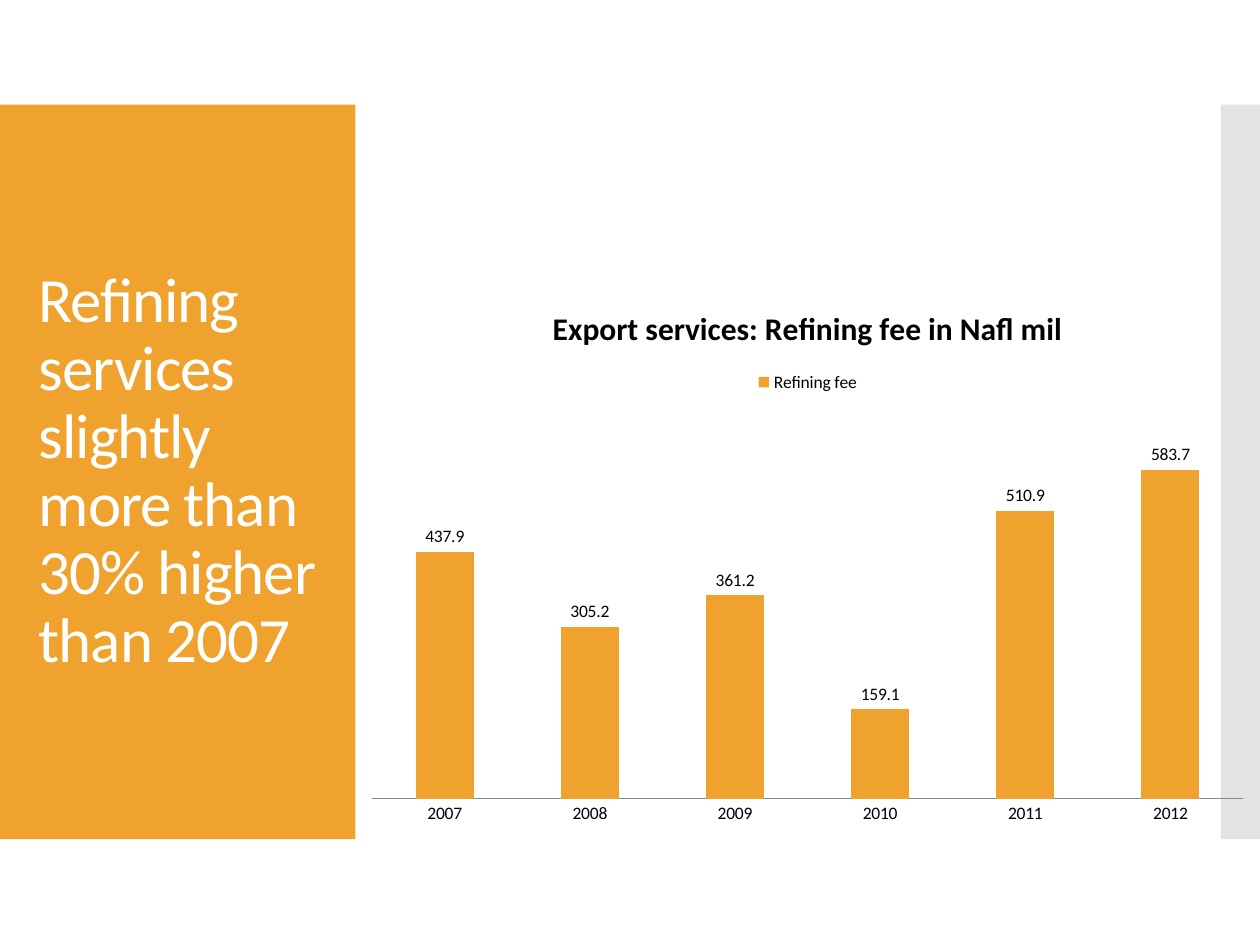
from dataclasses import dataclass

from lxml import etree
from pptx import Presentation
from pptx import util as u
from pptx.chart.data import CategoryChartData
from pptx.dml.color import RGBColor
from pptx.enum import chart as charts, shapes, text
from pptx.oxml import ns

COLORS = {"accent": "F0A22E", "edge": "C8C8C8", "white": "FFFFFF",
          "black": "000000", "axis": "898989"}
FONT = "Calibri"
HEADLINE = "Refining services slightly more than 30% higher than 2007"
CHART_TITLE = "Export services: Refining fee in Nafl mil"
FEES = {"2007": 437.9, "2008": 305.2, "2009": 361.2,
        "2010": 159.1, "2011": 510.9, "2012": 583.7}
PLOT_LAYOUT = {"x": 0.02, "y": 0.22, "w": 0.96, "h": 0.72}


@dataclass
class Panel:
    """A full-height colour band."""
    left: float
    width: float
    color: str
    alpha: int = 100


PANELS = [Panel(0, 2.82, "accent"), Panel(9.69, 0.31, "edge", 50)]


def rgb(name: str) -> RGBColor:
    """Look up a named colour."""
    return RGBColor.from_string(COLORS[name])


def style_font(font, size: float, color: str, bold: bool = False) -> None:
    """Set typeface, size, colour and weight."""
    font.name, font.size, font.bold = FONT, u.Pt(size), bold
    font.color.rgb = rgb(color)


def draw_panel(page, panel: Panel) -> None:
    """Draw one colour band."""
    box = page.shapes.add_shape(
        shapes.MSO_SHAPE.RECTANGLE, u.Inches(panel.left), u.Inches(0.83),
        u.Inches(panel.width), u.Inches(5.83))
    box.shadow.inherit = False
    box.line.fill.background()
    box.fill.solid()
    box.fill.fore_color.rgb = rgb(panel.color)
    if panel.alpha < 100:
        color = box.fill._xPr.find(".//" + ns.qn("a:srgbClr"))
        etree.SubElement(color, ns.qn("a:alpha")).set("val", str(panel.alpha * 1000))


def draw_headline(page) -> None:
    """Write the headline on the left band."""
    box = page.shapes.add_textbox(
        u.Inches(0.21), u.Inches(1.23), u.Inches(2.42), u.Inches(5.03))
    frame = box.text_frame
    frame.word_wrap = True
    frame.vertical_anchor = text.MSO_ANCHOR.MIDDLE
    frame.text = HEADLINE
    para = frame.paragraphs[0]
    para.line_spacing = 0.9
    span = para.runs[0]
    style_font(span.font, 36, "white")
    span._r.get_or_add_rPr().set("spc", "-60")


def fix_plot_layout(chart) -> None:
    """Place the inner plot area as fractions of the chart."""
    area = chart._chartSpace.chart.plotArea
    layout = area.find(ns.qn("c:layout"))
    if layout is None:
        layout = etree.Element(ns.qn("c:layout"))
        area.insert(0, layout)
    manual = etree.SubElement(layout, ns.qn("c:manualLayout"))
    settings = {"layoutTarget": "inner", "xMode": "edge", "yMode": "edge", **PLOT_LAYOUT}
    for name, value in settings.items():
        etree.SubElement(manual, ns.qn(f"c:{name}")).set("val", str(value))


def draw_chart(page) -> None:
    """Add the column chart of yearly refining fees."""
    data = CategoryChartData(number_format="0.0")
    data.categories = list(FEES)
    data.add_series("Refining fee", list(FEES.values()))
    chart = page.shapes.add_chart(
        charts.XL_CHART_TYPE.COLUMN_CLUSTERED, u.Inches(2.81), u.Inches(2.25),
        u.Inches(7.2), u.Inches(4.35), data).chart
    style_font(chart.font, 10, "black")

    chart.has_title = True
    frame = chart.chart_title.text_frame
    frame.text = CHART_TITLE
    style_font(frame.paragraphs[0].runs[0].font, 18, "black", bold=True)
    chart.chart_title.include_in_layout = False

    chart.has_legend = True
    chart.legend.position = charts.XL_LEGEND_POSITION.TOP
    chart.legend.include_in_layout = False

    years, fees = chart.category_axis, chart.value_axis
    years.major_tick_mark = years.minor_tick_mark = charts.XL_TICK_MARK.NONE
    years.format.line.color.rgb = rgb("axis")
    fees.has_major_gridlines = False
    fees.minimum_scale, fees.maximum_scale = 0, 700
    fees.visible = False

    plot = chart.plots[0]
    plot.gap_width, plot.overlap, plot.vary_by_categories = 150, -25, False
    series = plot.series[0]
    series.invert_if_negative = False
    series.format.fill.solid()
    series.format.fill.fore_color.rgb = rgb("accent")
    labels = series.data_labels
    labels.show_value = True
    labels.number_format, labels.number_format_is_linked = "0.0", False
    labels.position = charts.XL_LABEL_POSITION.OUTSIDE_END
    fix_plot_layout(chart)


def main() -> None:
    """Build and save the slide."""
    deck = Presentation()
    deck.slide_width, deck.slide_height = u.Inches(10), u.Inches(7.5)
    page = deck.slides.add_slide(deck.slide_layouts[6])
    for panel in PANELS:
        draw_panel(page, panel)
    draw_headline(page)
    draw_chart(page)
    deck.save("out.pptx")


if __name__ == "__main__":
    main()
